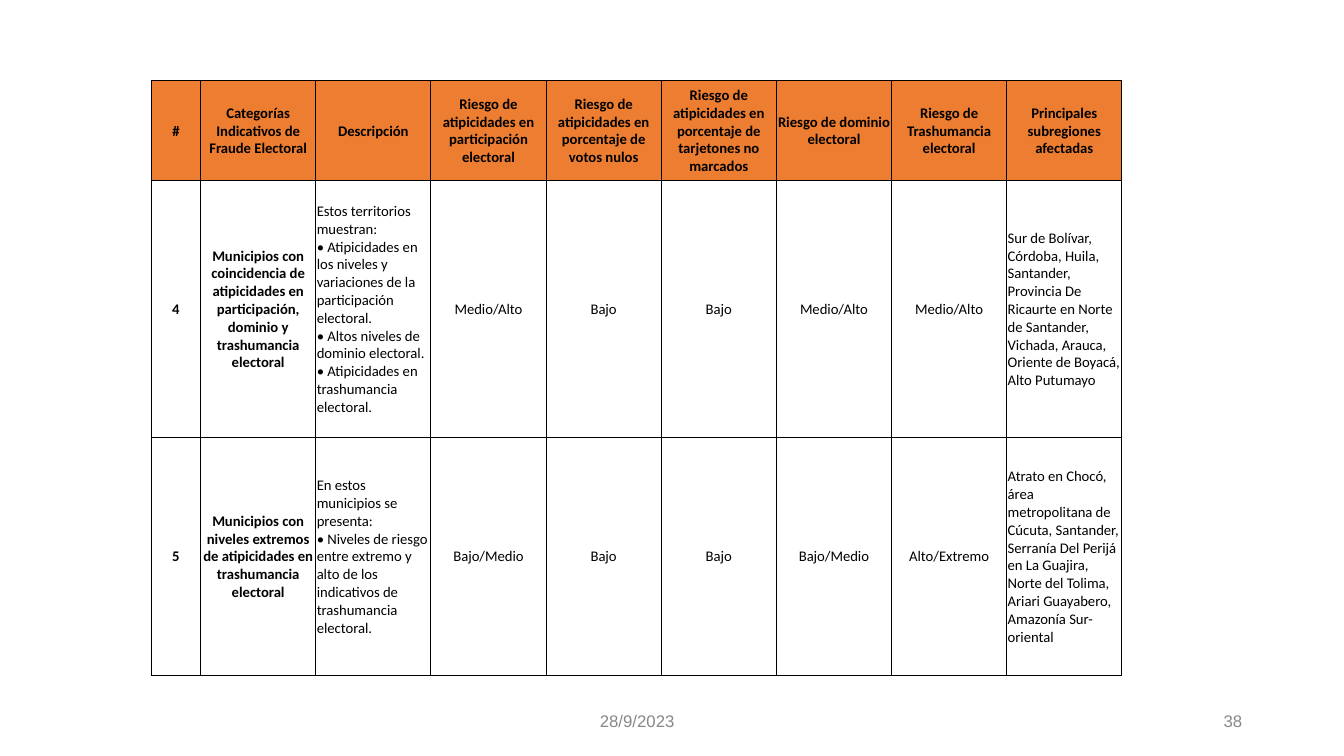
from dataclasses import dataclass

from lxml.etree import SubElement
from pptx import Presentation
from pptx.dml.color import RGBColor
from pptx.enum.text import MSO_ANCHOR as Anchor, PP_ALIGN as Align
from pptx.oxml.ns import qn
from pptx.util import Inches, Pt

COLORS = {"header": "ED7D31", "ink": "000000", "border": "000000", "footer": "888888"}

TABLE_LEFT, TABLE_TOP, TABLE_WIDTH = 1.5, 0.8, 9.63
NUMBER_WIDTH = 0.49
ROW_HEIGHTS = [0.99, 2.55, 2.36]
BOLD_COLUMNS = {0, 1}
LEFT_COLUMNS = {2, 8}

ROWS = [
    [
        "#",
        "Categorías Indicativos de Fraude Electoral",
        "Descripción",
        "Riesgo de atipicidades en participación electoral",
        "Riesgo de atipicidades en porcentaje de votos nulos",
        "Riesgo de atipicidades en porcentaje de tarjetones no marcados",
        "Riesgo de dominio electoral",
        "Riesgo de Trashumancia electoral",
        "Principales subregiones afectadas",
    ],
    [
        "4",
        "Municipios con coincidencia de atipicidades en participación, dominio y "
        "trashumancia electoral",
        "Estos territorios muestran:\n"
        "• Atipicidades en los niveles y variaciones de la participación electoral.\n"
        "• Altos niveles de dominio electoral.\n"
        "• Atipicidades en trashumancia electoral.",
        "Medio/Alto", "Bajo", "Bajo", "Medio/Alto", "Medio/Alto",
        "Sur de Bolívar, Córdoba, Huila, Santander, Provincia De Ricaurte en Norte "
        "de Santander, Vichada, Arauca, Oriente de Boyacá, Alto Putumayo",
    ],
    [
        "5",
        "Municipios con niveles extremos de atipicidades en trashumancia electoral",
        "En estos municipios se presenta:\n"
        "• Niveles de riesgo entre extremo y alto de los indicativos de "
        "trashumancia electoral.",
        "Bajo/Medio", "Bajo", "Bajo", "Bajo/Medio", "Alto/Extremo",
        "Atrato en Chocó, área metropolitana de Cúcuta, Santander, Serranía Del "
        "Perijá en La Guajira, Norte del Tolima, Ariari Guayabero, Amazonía "
        "Sur-oriental",
    ],
]


@dataclass
class FooterField:
    text: str
    left: float
    align: Align


FOOTER_FIELDS = [
    FooterField("28/9/2023", 4.82, Align.CENTER),
    FooterField("38", 9.42, Align.RIGHT),
]


def write_text(frame, text: str, *, size: float, font: str, color: str,
               align=Align.LEFT, bold: bool = False) -> None:
    """Write one paragraph per line of text."""
    frame.word_wrap = True
    for index, line in enumerate(text.split("\n")):
        para = frame.add_paragraph() if index else frame.paragraphs[0]
        para.alignment = align
        span = para.add_run()
        span.text = line
        span.font.size = Pt(size)
        span.font.name = font
        span.font.bold = bold
        span.font.color.rgb = RGBColor.from_string(COLORS[color])


def draw_borders(cell, color: str, width: float) -> None:
    """Insert the four border lines ahead of the cell fill."""
    properties = cell._tc.get_or_add_tcPr()
    for position, side in enumerate(("lnL", "lnR", "lnT", "lnB")):
        line = SubElement(properties, qn(f"a:{side}"), w=str(Pt(width)))
        fill = SubElement(line, qn("a:solidFill"))
        SubElement(fill, qn("a:srgbClr"), val=COLORS[color])
        properties.insert(position, line)


def add_risk_table(slide) -> None:
    column_count = len(ROWS[0])
    table = slide.shapes.add_table(
        len(ROWS), column_count, Inches(TABLE_LEFT), Inches(TABLE_TOP),
        Inches(TABLE_WIDTH), Inches(sum(ROW_HEIGHTS))).table
    table.horz_banding = False

    # The number column is narrow; the others share the rest equally
    shared_width = (TABLE_WIDTH - NUMBER_WIDTH) / (column_count - 1)
    for index, column in enumerate(table.columns):
        column.width = Inches(shared_width if index else NUMBER_WIDTH)
    for row, height in zip(table.rows, ROW_HEIGHTS):
        row.height = Inches(height)

    for row_index, texts in enumerate(ROWS):
        is_header = row_index == 0
        for column_index, text in enumerate(texts):
            cell = table.cell(row_index, column_index)
            cell.vertical_anchor = Anchor.MIDDLE
            cell.margin_left = cell.margin_right = cell.margin_top = Inches(0.01)
            cell.margin_bottom = 0
            if is_header:
                cell.fill.solid()
                cell.fill.fore_color.rgb = RGBColor.from_string(COLORS["header"])
            else:
                cell.fill.background()
            draw_borders(cell, "border", 0.75)
            is_left = not is_header and column_index in LEFT_COLUMNS
            write_text(cell.text_frame, text, size=10.5, font="Calibri", color="ink",
                       align=Align.LEFT if is_left else Align.CENTER,
                       bold=is_header or column_index in BOLD_COLUMNS)


def add_footer_field(slide, field: FooterField) -> None:
    box = slide.shapes.add_textbox(
        Inches(field.left), Inches(6.95), Inches(3), Inches(0.4))
    box.text_frame.vertical_anchor = Anchor.MIDDLE
    write_text(box.text_frame, field.text, size=12, font="Arial", color="footer",
               align=field.align)


def main() -> None:
    deck = Presentation()
    deck.slide_width, deck.slide_height = Inches(13.33), Inches(7.5)
    page = deck.slides.add_slide(deck.slide_layouts[6])

    # Risk categories
    add_risk_table(page)

    # Date and page number
    for field in FOOTER_FIELDS:
        add_footer_field(page, field)

    deck.save("out.pptx")


if __name__ == "__main__":
    main()
